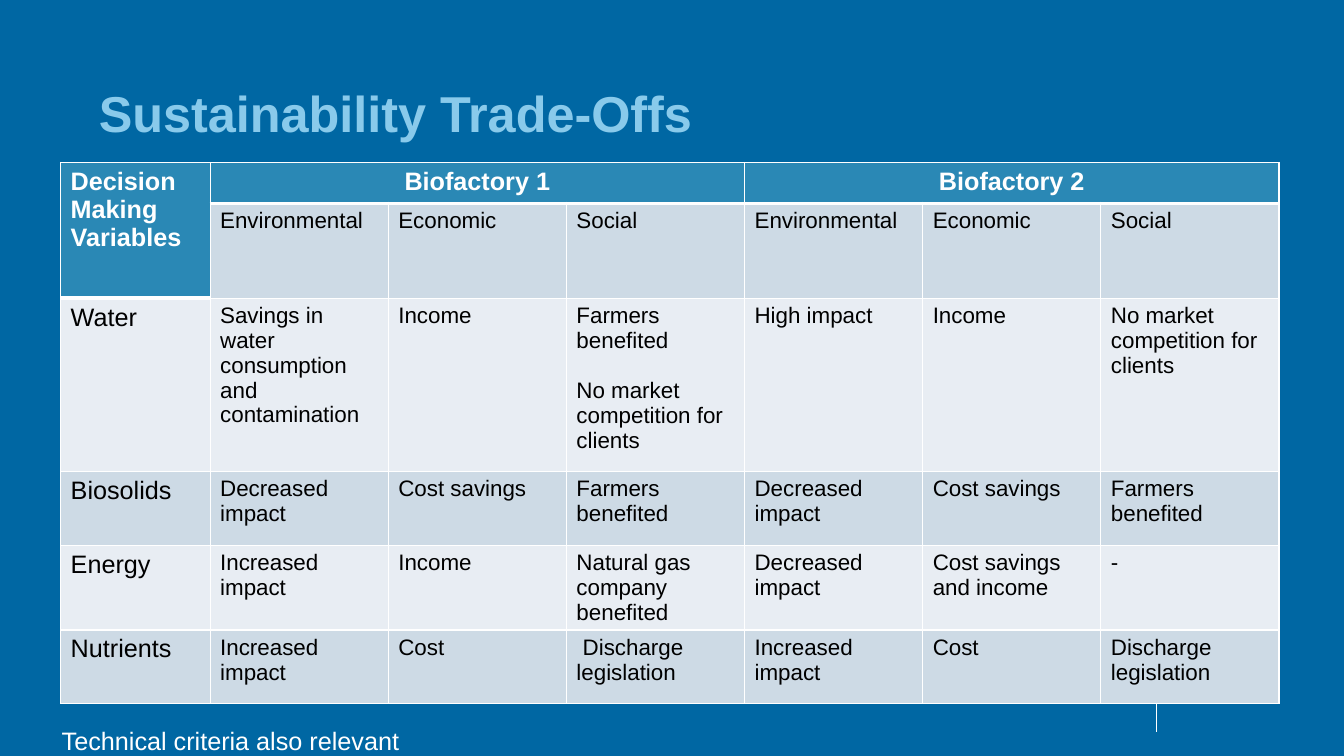
from pptx import Presentation
from pptx.dml.color import RGBColor
from pptx.enum.shapes import MSO_CONNECTOR
from pptx.enum.text import MSO_ANCHOR, PP_ALIGN
from pptx.oxml import parse_xml
from pptx.oxml.ns import nsdecls
from pptx.util import Pt

FONT = "Arial"
BACKGROUND = RGBColor(0x00, 0x67, 0xA3)
SKY = RGBColor(0x89, 0xCA, 0xEB)
HEADER = RGBColor(0x2A, 0x88, 0xB5)
BAND_DARK = RGBColor(0xCD, 0xDA, 0xE5)
BAND_LIGHT = RGBColor(0xE8, 0xED, 0xF3)
WHITE = RGBColor(0xFF, 0xFF, 0xFF)
BLACK = RGBColor(0x00, 0x00, 0x00)

CRITERIA = ["Environmental", "Economic", "Social"]
ROWS = [
    ["Decision Making Variables", "Biofactory 1", "", "", "Biofactory 2", "", ""],
    [""] + CRITERIA * 2,
    ["Water", "Savings in water consumption and contamination", "Income",
     "Farmers benefited\nNo market competition for clients",
     "High impact", "Income", "No market competition for clients"],
    ["Biosolids", "Decreased impact", "Cost savings", "Farmers benefited",
     "Decreased impact", "Cost savings", "Farmers benefited"],
    ["Energy", "Increased impact", "Income", "Natural gas company benefited",
     "Decreased impact", "Cost savings and income", "-"],
    ["Nutrients", "Increased impact", "Cost", " Discharge legislation",
     "Increased impact", "Cost", "Discharge legislation"],
]
COL_WIDTHS = [106.8] + [127.25] * 6
ROW_HEIGHTS = [29.2, 67.6, 123.8, 52.6, 60.7, 52.6]


def style(p, size, color, bold=False):
    p.font.name = FONT
    p.font.size = Pt(size)
    p.font.bold = bold
    p.font.color.rgb = color


def add_title(s, text):
    title = s.shapes.title
    title.left, title.top, title.width, title.height = Pt(63.4), Pt(60.5), Pt(850.3), Pt(44.6)
    tf = title.text_frame
    tf.text = text
    tf.word_wrap = True
    tf.vertical_anchor = MSO_ANCHOR.MIDDLE
    p = tf.paragraphs[0]
    p.alignment = PP_ALIGN.LEFT
    p.line_spacing = 0.9
    style(p, 36, SKY, True)


def add_rule(s, x, top, bottom):
    rule = s.shapes.add_connector(MSO_CONNECTOR.STRAIGHT, Pt(x), Pt(top), Pt(x), Pt(bottom))
    rule.line.color.rgb = WHITE
    rule.line.width = Pt(0.5)
    rule._element.spPr.append(parse_xml(f"<a:effectLst {nsdecls('a')}/>"))


def set_borders(cell, top, bottom):
    tcPr = cell._tc.get_or_add_tcPr()
    for side, width in (("L", 1), ("R", 1), ("T", top), ("B", bottom)):
        tcPr.append(parse_xml(
            f'<a:ln{side} {nsdecls("a")} w="{Pt(width)}"><a:solidFill>'
            f'<a:srgbClr val="{WHITE}"/></a:solidFill></a:ln{side}>'))


def format_cell(cell, row, col, text):
    is_header = row == 0 or (row == 1 and col == 0)
    # A heavy line divides the header from the body
    below_header = row == (2 if col == 0 else 1)
    set_borders(cell, 3 if below_header else 1, 3 if is_header else 1)
    cell.fill.solid()
    cell.fill.fore_color.rgb = HEADER if is_header else BAND_DARK if row % 2 else BAND_LIGHT
    if not text:
        return
    cell.text = text
    for i, p in enumerate(cell.text_frame.paragraphs):
        if i:
            p.space_before = Pt(18)
        if row == 0 and col:
            p.alignment = PP_ALIGN.CENTER
        style(p, 18 if is_header or col == 0 else 16, WHITE if is_header else BLACK, is_header)


def add_trade_off_table(s):
    frame = s.shapes.add_table(len(ROWS), len(COL_WIDTHS), Pt(43.3), Pt(116.1),
                               Pt(sum(COL_WIDTHS)), Pt(sum(ROW_HEIGHTS)))
    table = frame.table
    for column, width in zip(table.columns, COL_WIDTHS):
        column.width = Pt(width)
    for row, height in zip(table.rows, ROW_HEIGHTS):
        row.height = Pt(height)
    for r, texts in enumerate(ROWS):
        for c, text in enumerate(texts):
            format_cell(table.cell(r, c), r, c, text)
    # Merged headers
    table.cell(0, 0).merge(table.cell(1, 0))
    for first in (1, 4):
        table.cell(0, first).merge(table.cell(0, first + 2))


def add_footnote(s, text):
    tf = s.shapes.add_textbox(Pt(37), Pt(514.8), Pt(255.6), Pt(28.8)).text_frame
    tf.word_wrap = False
    tf.text = text
    style(tf.paragraphs[0], 18, WHITE)


def main():
    prs = Presentation()
    prs.slide_width, prs.slide_height = Pt(960), Pt(540)
    s = prs.slides.add_slide(prs.slide_layouts[5])
    s.background.fill.solid()
    s.background.fill.fore_color.rgb = BACKGROUND
    add_rule(s, 826, 463.7, 522.7)
    add_title(s, "Sustainability Trade-Offs")
    add_trade_off_table(s)
    add_footnote(s, "Technical criteria also relevant")
    prs.save("out.pptx")


if __name__ == "__main__":
    main()
